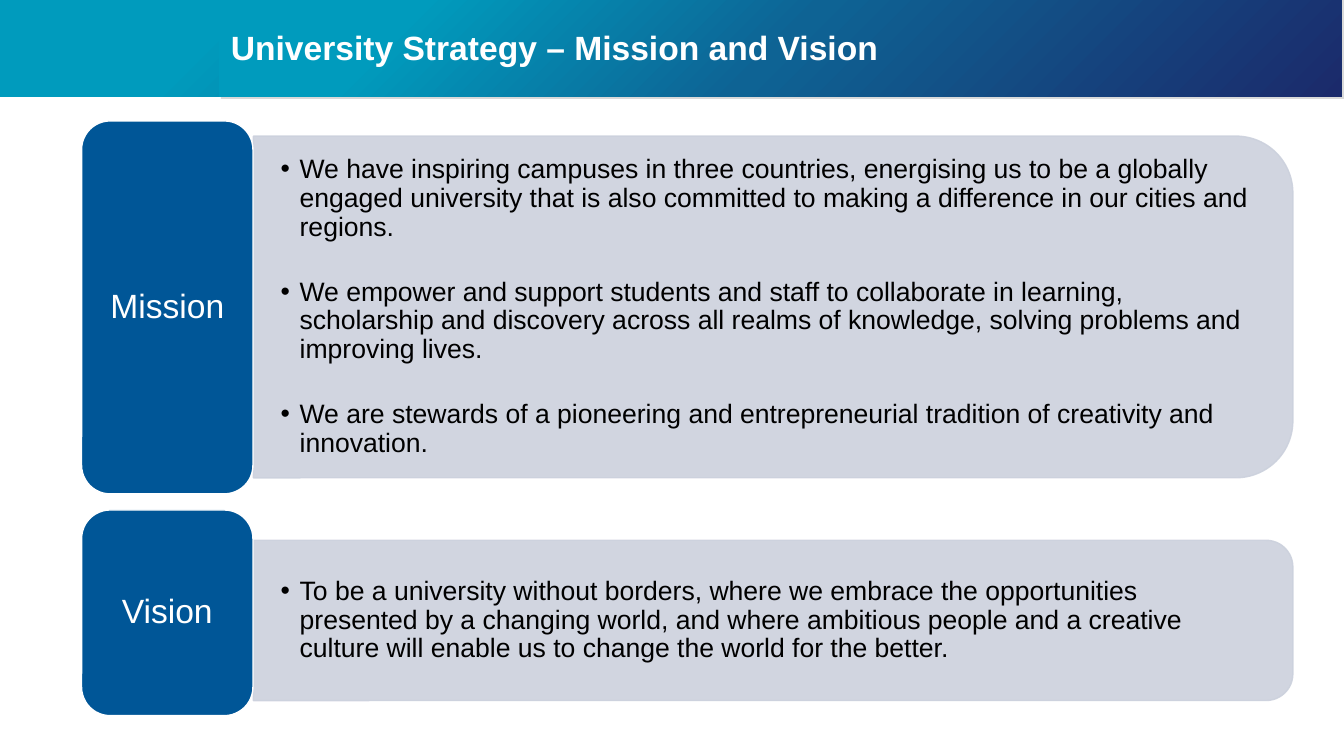
import copy
from dataclasses import dataclass

import pptx
import pptx.dml.color
import pptx.enum.shapes
import pptx.enum.text
import pptx.oxml
import pptx.oxml.ns
import pptx.util

Pt = pptx.util.Pt
Shape = pptx.enum.shapes.MSO_SHAPE
Align = pptx.enum.text.PP_ALIGN
Anchor = pptx.enum.text.MSO_ANCHOR

TITLE = "University Strategy – Mission and Vision"
# Each section: label, bullets, label box (top, height), panel (top, height)
SECTIONS = [
    ("Mission", [
        "We have inspiring campuses in three countries, energising us to be a globally engaged "
        "university that is also committed to making a difference in our cities and regions.",
        "We empower and support students and staff to collaborate in learning, scholarship and "
        "discovery across all realms of knowledge, solving problems and improving lives.",
        "We are stewards of a pioneering and entrepreneurial tradition of creativity and "
        "innovation.",
    ], (86.4, 266.4), (97.2, 244.1), 730.8),
    ("Vision", [
        "To be a university without borders, where we embrace the opportunities presented by a "
        "changing world, and where ambitious people and a creative culture will enable us to "
        "change the world for the better.",
    ], (364.3, 146.9), (385.9, 114.5), 736.6),
]
# Left, top, width, height
BANNERS = [(0, -1.4, 960, 70.6), (156.2, -1.4, 802, 70.6)]
BANNER_EDGE = (157.7, 0, 802.3, 70.6)
TITLE_BOX = (157.7, 7.9, 802, 54.7)
LABEL_LEFT, LABEL_WIDTH = 58.3, 122.4
PANEL_LEFT, PANEL_WIDTH = 181, 742.5
BULLET_INDENT, BULLET_GAP = 13.7, 26


@dataclass(frozen=True)
class Theme:
    font: str = "Arial"
    heading_size: int = 24
    body_size: int = 19
    white: str = "FFFFFF"
    black: str = "000000"
    label: str = "005697"
    panel: str = "CCD1DD"
    edge: str = "D9D9D9"
    gradient: tuple = ((0.17, "009BBD"), (0.5, "0E6394"), (1, "1B2A6B"))


theme = Theme()


def rgb(code):
    return pptx.dml.color.RGBColor.from_string(code)


def place(shape, box):
    shape.left, shape.top, shape.width, shape.height = map(Pt, box)


def add_block(slide, kind, box, fill=None, line=None):
    shape = slide.shapes.add_shape(kind, *map(Pt, box))
    shape.shadow.inherit = False
    if fill:
        shape.fill.solid()
        shape.fill.fore_color.rgb = rgb(fill)
    if line:
        shape.line.color.rgb = rgb(line)
        shape.line.width = Pt(1)
    else:
        shape.line.fill.background()
    return shape


def add_banner(slide, box):
    banner = add_block(slide, Shape.RECTANGLE, box)
    banner.fill.gradient()
    banner.fill.gradient_angle = 315
    stops = banner.element.find(".//" + pptx.oxml.ns.qn("a:gsLst"))
    stops.append(copy.deepcopy(stops[-1]))
    for stop, (position, color) in zip(banner.fill.gradient_stops, theme.gradient):
        stop.position = position
        stop.color.rgb = rgb(color)


def add_panel(slide, top, height):
    """Add a slightly transparent panel whose two right corners are rounded."""
    left = PANEL_LEFT + (PANEL_WIDTH - height) / 2
    upright_top = top + (height - PANEL_WIDTH) / 2
    panel = add_block(slide, Shape.ROUND_2_SAME_RECTANGLE,
                      (left, upright_top, height, PANEL_WIDTH), theme.panel, theme.panel)
    panel.rotation = 90
    for color in panel.element.spPr.iter(pptx.oxml.ns.qn("a:srgbClr")):
        color.append(pptx.oxml.parse_xml(
            f'<a:alpha {pptx.oxml.ns.nsdecls("a")} val="90000"/>'))


def bring_to_front(shape):
    shape.element.getparent().append(shape.element)


def write(shape, lines, size, color, align, insets, bold=False):
    frame = shape.text_frame
    frame.word_wrap = True
    frame.auto_size = pptx.enum.text.MSO_AUTO_SIZE.NONE
    frame.vertical_anchor = Anchor.MIDDLE
    frame.margin_left = frame.margin_right = Pt(insets[0])
    frame.margin_top = frame.margin_bottom = Pt(insets[1])
    frame.text = "\n".join(lines)
    for index, paragraph in enumerate(frame.paragraphs):
        paragraph.alignment = align
        paragraph.line_spacing = 0.9
        paragraph.space_before = Pt(BULLET_GAP if index else 0)
        paragraph.space_after = Pt(0)
        paragraph.font.name = theme.font
        paragraph.font.size = Pt(size)
        paragraph.font.bold = bold
        paragraph.font.color.rgb = rgb(color)


def add_section(slide, body, section):
    label, bullets, (label_top, label_height), (top, height), text_width = section
    add_panel(slide, top, height)
    place(body, (PANEL_LEFT, top, text_width, height))
    write(body, bullets, theme.body_size, theme.black, Align.LEFT, (19.4, 10))
    for paragraph in body.text_frame.paragraphs:
        properties = paragraph._p.get_or_add_pPr()
        properties.set("marL", str(Pt(BULLET_INDENT)))
        properties.set("indent", str(-Pt(BULLET_INDENT)))
    bring_to_front(body)
    box = add_block(slide, Shape.ROUNDED_RECTANGLE,
                    (LABEL_LEFT, label_top, LABEL_WIDTH, label_height), theme.label, theme.white)
    write(box, [label], theme.heading_size, theme.white, Align.CENTER, (7.2, 3.6))


def main():
    presentation = pptx.Presentation()
    presentation.slide_width, presentation.slide_height = Pt(960), Pt(540)
    slide = presentation.slides.add_slide(
        presentation.slide_layouts.get_by_name("Two Content"))
    title, *bodies = slide.placeholders

    add_banner(slide, BANNERS[0])
    add_block(slide, Shape.RECTANGLE, BANNER_EDGE, theme.edge)
    add_banner(slide, BANNERS[1])
    place(title, TITLE_BOX)
    write(title, [TITLE], theme.heading_size, theme.white, Align.LEFT, (7.2, 3.6), bold=True)
    bring_to_front(title)

    for body, section in zip(bodies, SECTIONS):
        add_section(slide, body, section)
    presentation.save("out.pptx")


if __name__ == "__main__":
    main()
